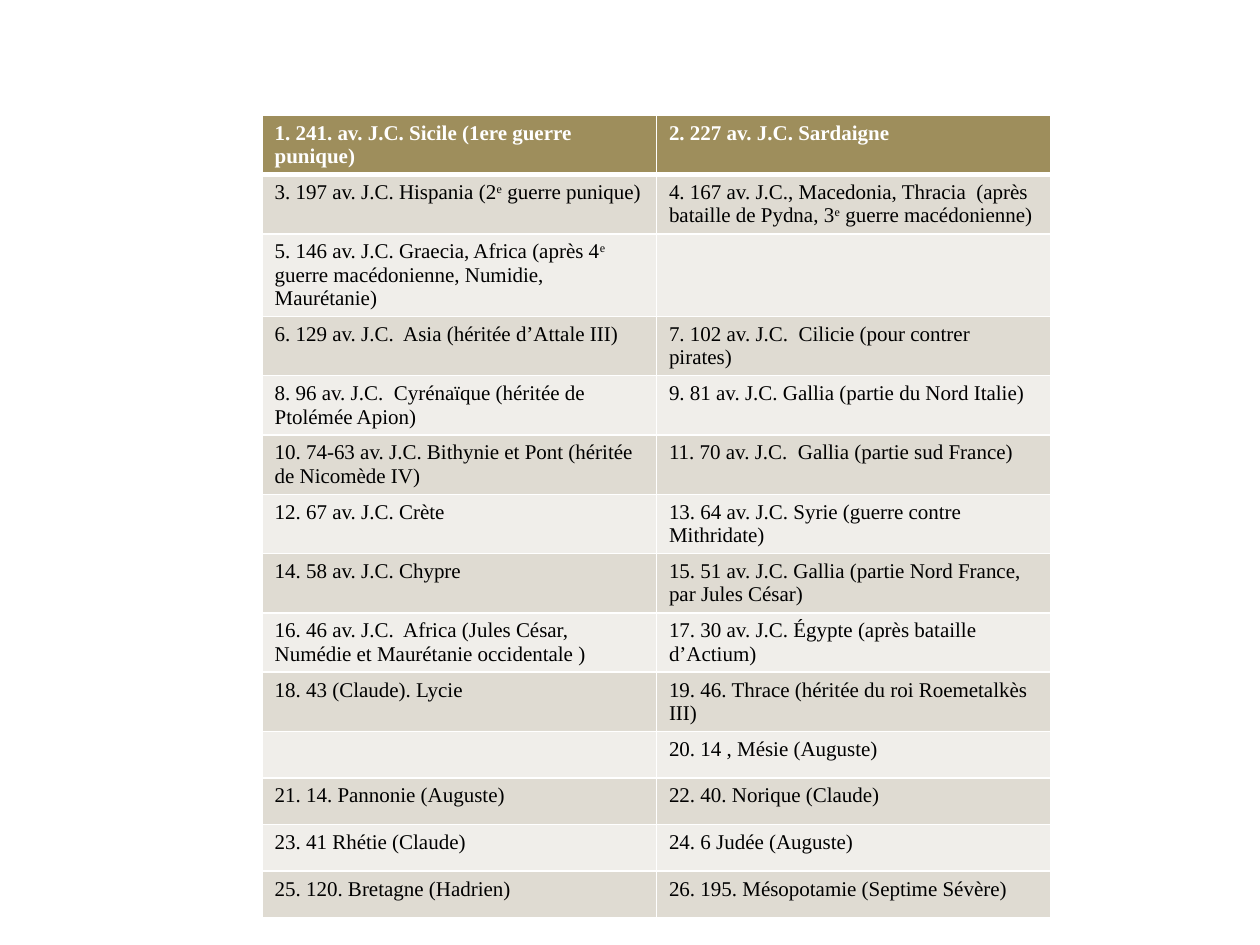
from lxml import etree
from pptx import Presentation
from pptx.dml.color import RGBColor
from pptx.oxml.ns import qn
from pptx.util import Inches, Pt

WHITE = RGBColor(0xFF, 0xFF, 0xFF)
BLACK = RGBColor(0x00, 0x00, 0x00)
HEADER = RGBColor(0x9E, 0x8E, 0x5C)
BANDS = (RGBColor(0xF0, 0xEE, 0xEA), RGBColor(0xDF, 0xDB, 0xD2))

LOW, HIGH = 0.37, 0.45  # row heights in inches
HIGH_ROWS = {1, 2, 4, 5, 7, 8}

# Text between carets is set as superscript
PROVINCES = [
    ("1. 241. av. J.C. Sicile (1ere guerre punique)",
     "2. 227 av. J.C. Sardaigne"),
    ("3. 197 av. J.C. Hispania (2^e^ guerre punique)",
     "4. 167 av. J.C., Macedonia, Thracia  (après bataille de Pydna, "
     "3^e^ guerre macédonienne)"),
    ("5. 146 av. J.C. Graecia, Africa (après 4^e^ guerre macédonienne, "
     "Numidie, Maurétanie)", ""),
    ("6. 129 av. J.C.  Asia (héritée d’Attale III)",
     "7. 102 av. J.C.  Cilicie (pour contrer pirates)"),
    ("8. 96 av. J.C.  Cyrénaïque (héritée de Ptolémée Apion)",
     "9. 81 av. J.C. Gallia (partie du Nord Italie)"),
    ("10. 74-63 av. J.C. Bithynie et Pont (héritée de Nicomède IV)",
     "11. 70 av. J.C.  Gallia (partie sud France)"),
    ("12. 67 av. J.C. Crète",
     "13. 64 av. J.C. Syrie (guerre contre Mithridate)"),
    ("14. 58 av. J.C. Chypre",
     "15. 51 av. J.C. Gallia (partie Nord France, par Jules César)"),
    ("16. 46 av. J.C.  Africa (Jules César, Numédie et Maurétanie occidentale )",
     "17. 30 av. J.C. Égypte (après bataille d’Actium)"),
    ("18. 43 (Claude). Lycie",
     "19. 46. Thrace (héritée du roi Roemetalkès III)"),
    ("", "20. 14 , Mésie (Auguste)"),
    ("21. 14. Pannonie (Auguste)", "22. 40. Norique (Claude)"),
    ("23. 41 Rhétie (Claude)", "24. 6 Judée (Auguste)"),
    ("25. 120. Bretagne (Hadrien)", "26. 195. Mésopotamie (Septime Sévère)"),
]


class Deck:
    font, size = "Times New Roman", Pt(12)

    def __init__(self, width, height):
        self.prs = Presentation()
        self.prs.slide_width, self.prs.slide_height = width, height
        self.s = self.prs.slides.add_slide(self.prs.slide_layouts[6])

    def cell_text(self, cell, text, color, bold):
        p = cell.text_frame.paragraphs[0]
        if not text:  # an empty cell keeps the table's text size
            etree.SubElement(p._p, qn("a:endParaRPr"), sz=str(int(self.size.pt * 100)))
            return
        for i, part in enumerate(text.split("^")):
            r = p.add_run()
            r.text = part
            r.font.name, r.font.size = self.font, self.size
            r.font.bold, r.font.color.rgb = bold, color
            if i % 2:
                r.font._element.set("baseline", "30000")

    def borders(self, cell, top, bottom):
        tcPr = cell._tc.get_or_add_tcPr()
        widths = {"lnL": 1, "lnR": 1, "lnT": top, "lnB": bottom}
        for i, (side, width) in enumerate(widths.items()):
            ln = etree.Element(qn(f"a:{side}"), w=str(int(Pt(width))))
            fill = etree.SubElement(ln, qn("a:solidFill"))
            etree.SubElement(fill, qn("a:srgbClr"), val=str(WHITE))
            tcPr.insert(i, ln)

    def table(self, rows, heights, x, y, w, h):
        """Place a table; x, y, w and h are shares of the slide's size."""
        sw, sh = self.prs.slide_width, self.prs.slide_height
        frame = self.s.shapes.add_table(len(rows), len(rows[0]), int(x * sw),
                                        int(y * sh), int(w * sw), int(h * sh))
        for i, (texts, height) in enumerate(zip(rows, heights)):
            row = frame.table.rows[i]
            row.height = Inches(height)
            head = i == 0
            for cell, text in zip(row.cells, texts):
                cell.fill.solid()
                cell.fill.fore_color.rgb = HEADER if head else BANDS[i % 2]
                self.borders(cell, 3 if i == 1 else 1, 3 if head else 1)
                self.cell_text(cell, text, WHITE if head else BLACK, head)
        frame.height = int(h * sh)


def main():
    deck = Deck(Inches(10), Inches(7.5))

    # Roman provinces in order of conquest
    heights = [HIGH if i in HIGH_ROWS else LOW for i in range(len(PROVINCES))]
    deck.table(PROVINCES, heights, 0.208, 0.122, 0.626, 0.808)

    deck.prs.save("out.pptx")


if __name__ == "__main__":
    main()
